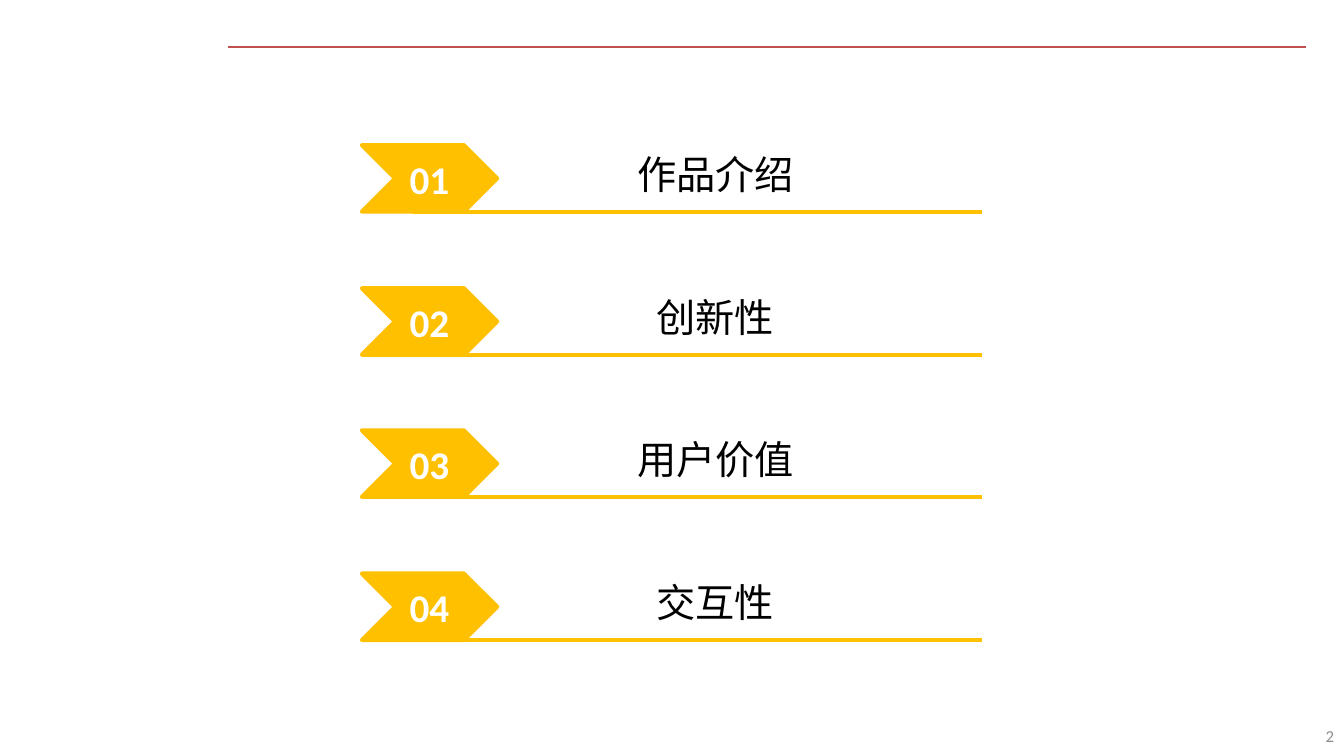
import pptx
import pptx.dml.color
import pptx.enum.shapes
import pptx.enum.text
import pptx.oxml.ns
import pptx.util
from lxml import etree

PX = 9144
AMBER = pptx.dml.color.RGBColor(0xFF, 0xC0, 0x00)
BRICK = pptx.dml.color.RGBColor(0xC0, 0x50, 0x4D)
GREY = pptx.dml.color.RGBColor(0x8C, 0x8C, 0x8C)
BLACK = pptx.dml.color.RGBColor(0x00, 0x00, 0x00)
WHITE = pptx.dml.color.RGBColor(0xFF, 0xFF, 0xFF)
ALIGN = pptx.enum.text.PP_ALIGN
ANCHOR = pptx.enum.text.MSO_ANCHOR

TOPICS = ["作品介绍", "创新性", "用户价值", "交互性"]
NUMBER_FORMAT = {"name": "Calibri", "size": pptx.util.Pt(28), "bold": True}
TOPIC_FORMAT = {"name": "Noto Sans CJK SC", "size": pptx.util.Pt(28)}
PAGE_FORMAT = {"name": "Calibri", "size": pptx.util.Pt(12)}


def px(*lengths):
    return [pptx.util.Emu(length * PX) for length in lengths]


def write_text(holder, text, font_format, color, align, anchor):
    frame = holder.text_frame
    frame.word_wrap = True
    frame.vertical_anchor = anchor
    paragraph = frame.paragraphs[0]
    paragraph.alignment = align
    run = paragraph.add_run()
    run.text = text
    for attribute, value in font_format.items():
        setattr(run.font, attribute, value)
    run.font.color.rgb = color
    east_asian = etree.SubElement(run.font._element, pptx.oxml.ns.qn("a:ea"))
    east_asian.set("typeface", font_format["name"])


def draw_rule(slide, left, right, y, color, weight):
    rule = slide.shapes.add_connector(
        pptx.enum.shapes.MSO_CONNECTOR.STRAIGHT, *px(left, y, right, y))
    rule.line.color.rgb = color
    rule.line.width = pptx.util.Pt(weight)
    etree.SubElement(rule._element.spPr, pptx.oxml.ns.qn("a:effectLst"))


def draw_agenda_row(slide, left, top, width, height, number, topic):
    title = slide.shapes.add_textbox(*px(left + 260, top, 181, 57))
    write_text(title, topic, TOPIC_FORMAT, BLACK, ALIGN.CENTER, ANCHOR.TOP)

    chevron = slide.shapes.add_shape(
        pptx.enum.shapes.MSO_SHAPE.CHEVRON, *px(left, top, 134, height))
    chevron.shadow.inherit = False
    chevron.fill.solid()
    chevron.fill.fore_color.rgb = AMBER
    chevron.line.color.rgb = AMBER
    chevron.line.width = pptx.util.Pt(3)
    write_text(chevron, f"{number:02d}", NUMBER_FORMAT, WHITE,
               ALIGN.CENTER, ANCHOR.MIDDLE)

    draw_rule(slide, left + 51, left + width, top + height, AMBER, 3)


def draw_agenda(slide, left, top, width, height, row_height):
    gaps = len(TOPICS) - 1
    for index, topic in enumerate(TOPICS):
        row_top = top + round(index * (height - row_height) / gaps)
        draw_agenda_row(slide, left, row_top, width, row_height,
                        index + 1, topic)


def draw_page_number(slide, left, top, width, height):
    page_number = slide.shapes.add_textbox(*px(left, top, width, height))
    write_text(page_number, "2", PAGE_FORMAT, GREY,
               ALIGN.RIGHT, ANCHOR.MIDDLE)


def main():
    deck = pptx.Presentation()
    deck.slide_width, deck.slide_height = px(1333, 750)
    slide = deck.slides.add_slide(deck.slide_layouts[6])
    draw_rule(slide, 226, 1295, 47, BRICK, 1.5)
    draw_page_number(slide, 1033, 710, 300, 40)
    draw_agenda(slide, 359, 144, 615, 491, 66)
    deck.save("out.pptx")


if __name__ == "__main__":
    main()
